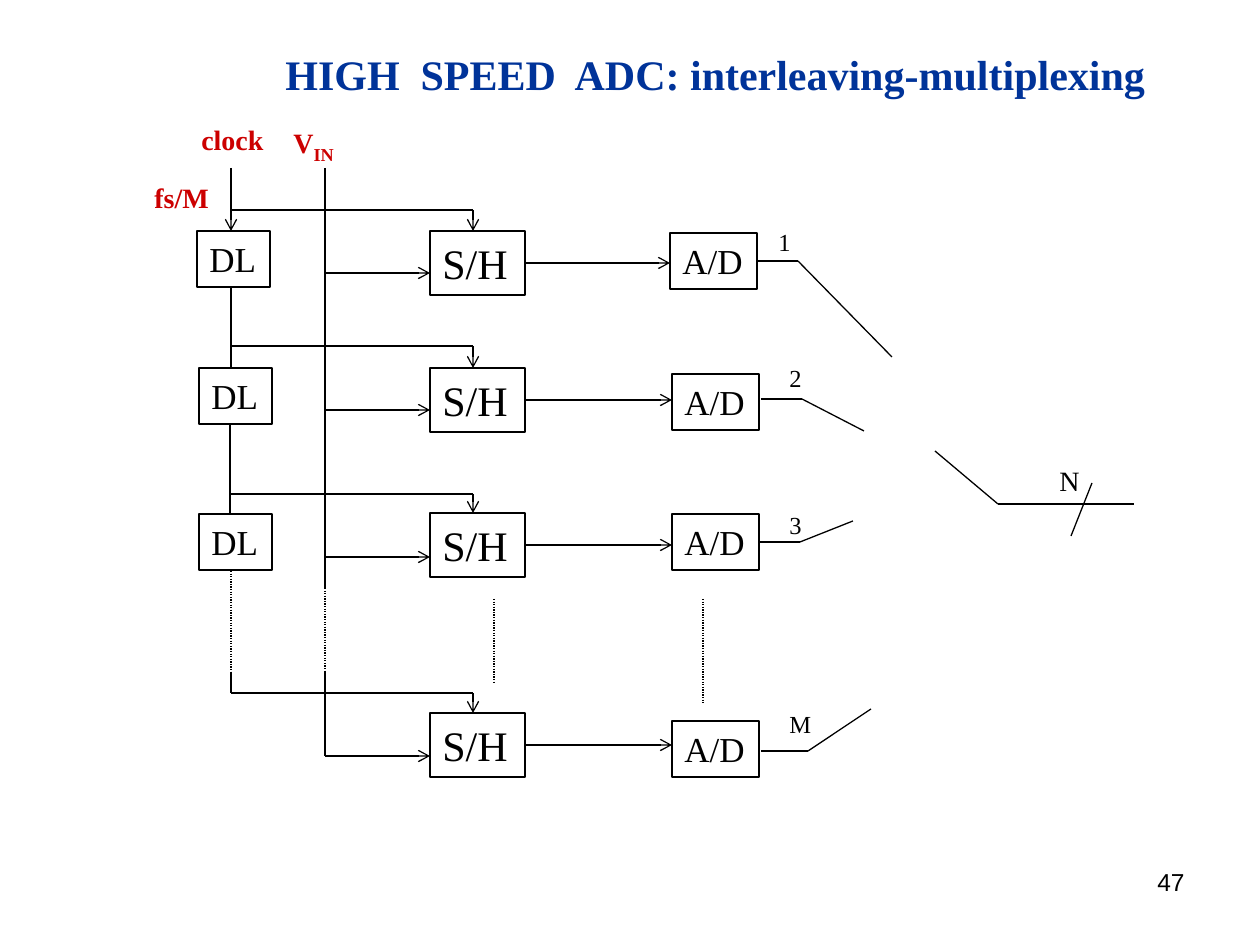
from typing import NamedTuple, Optional

from lxml import etree
from pptx import Presentation
from pptx.dml.color import RGBColor
from pptx.enum.dml import MSO_LINE
from pptx.enum.shapes import MSO_CONNECTOR, MSO_SHAPE
from pptx.enum.text import MSO_ANCHOR, PP_ALIGN
from pptx.oxml.ns import qn
from pptx.util import Emu, Pt

RECT = MSO_SHAPE.RECTANGLE
STRAIGHT = MSO_CONNECTOR.STRAIGHT
DOTTED = MSO_LINE.ROUND_DOT
TOP = MSO_ANCHOR.TOP
LEFT, RIGHT = PP_ALIGN.LEFT, PP_ALIGN.RIGHT
RIGHT_SIDE = 3

EMU_PER_PX = 914400 / 126
BLACK, RED, BLUE = "000000", "CC0000", "003399"
SERIF, SANS = "Times New Roman", "Arial"
CLOCK_X, VIN_X, DROP_X = 231, 325, 473
SH_X, SH_W, SH_H = 430, 95, 64
DL_W, AD_W, BLOCK_H = 73, 87, 56


class Label(NamedTuple):
    text: str
    x: int
    y: int
    w: int
    h: int
    size: int
    color: str = BLACK
    bold: bool = False
    font: str = SERIF
    align: PP_ALIGN = LEFT
    wrap: bool = False
    subscript: str = ""


class Channel(NamedTuple):
    name: str
    name_x: int
    name_y: int
    bus_y: int
    sh_y: int
    vin_y: int
    ad_x: int
    ad_y: int
    lead_x: int
    knee: tuple[int, int]
    tip: tuple[int, int]


class Wire(NamedTuple):
    x1: int
    y1: int
    x2: int
    y2: int
    arrow: bool = False
    dotted: bool = False


CHANNELS = [
    Channel("1", 766, 221, 210, 231, 273, 670, 233, 757, (798, 261), (892, 357)),
    Channel("2", 777, 357, 346, 368, 410, 672, 374, 761, (802, 399), (864, 431)),
    Channel("3", 777, 504, 494, 513, 557, 672, 514, 759, (800, 542), (853, 521)),
    Channel("M", 777, 703, 693, 713, 756, 672, 721, 761, (808, 751), (871, 709)),
]

DELAYS = [(197, 231), (199, 368), (199, 514)]

WIRES = [
    Wire(CLOCK_X, 168, CLOCK_X, 231, arrow=True),
    Wire(CLOCK_X, 287, CLOCK_X, 368),
    Wire(230, 424, 230, 514),
    Wire(CLOCK_X, 571, CLOCK_X, 672, dotted=True),
    Wire(CLOCK_X, 672, CLOCK_X, 693),
    Wire(VIN_X, 168, VIN_X, 588),
    Wire(VIN_X, 588, VIN_X, 672, dotted=True),
    Wire(VIN_X, 672, VIN_X, 756),
    Wire(494, 599, 494, 683, dotted=True),
    Wire(703, 599, 703, 703, dotted=True),
    Wire(935, 451, 998, 504),
    Wire(998, 504, 1134, 504),
    Wire(1092, 483, 1071, 536),
]

LABELS = [
    Label("HIGH  SPEED  ADC: interleaving-multiplexing",
          273, 42, 887, 63, 24, BLUE, True),
    Label("clock", 189, 116, 88, 47, 16, RED, True),
    Label("V", 281, 116, 69, 50, 16, RED, True, wrap=True, subscript="IN"),
    Label("fs/M", 142, 174, 81, 47, 16, RED, True),
    Label("N", 1047, 457, 45, 47, 16),
    Label("47", 903, 861, 294, 66, 14, font=SANS, align=RIGHT, wrap=True),
]


def px(n: int) -> Emu:
    return Emu(round(n * EMU_PER_PX))


def rgb(color: str) -> RGBColor:
    return RGBColor.from_string(color)


def write(s, label: Label) -> None:
    tf = s.text_frame
    tf.word_wrap = label.wrap
    tf.vertical_anchor = TOP
    tf.text = label.text
    p = tf.paragraphs[0]
    p.alignment = label.align
    if label.subscript:
        r = p.add_run()
        r.text = label.subscript
        r._r.get_or_add_rPr().set("baseline", "-25000")
    for r in p.runs:
        r.font.name = label.font
        r.font.size = Pt(label.size)
        r.font.bold = label.bold
        r.font.color.rgb = rgb(label.color)
    if label.subscript:
        p.runs[1].font.size = Pt(18)


def add_label(sp, label: Label) -> None:
    write(sp.add_textbox(px(label.x), px(label.y), px(label.w), px(label.h)), label)


def add_block(sp, label: Label):
    s = sp.add_shape(RECT, px(label.x), px(label.y), px(label.w), px(label.h))
    s.shadow.inherit = False
    s.fill.background()
    s.line.color.rgb = rgb(BLACK)
    s.line.width = Pt(0.75)
    write(s, label)
    return s


def add_wire(sp, wire: Wire, source: Optional[object] = None) -> None:
    c = sp.add_connector(STRAIGHT, px(wire.x1), px(wire.y1), px(wire.x2), px(wire.y2))
    if source is not None:
        c.begin_connect(source, RIGHT_SIDE)
    c.line.color.rgb = rgb(BLACK)
    c.line.width = Pt(0.75)
    if wire.dotted:
        c.line.dash_style = DOTTED
    props = c._element.spPr
    if wire.arrow:
        etree.SubElement(props.find(qn("a:ln")), qn("a:tailEnd"), type="arrow")
    etree.SubElement(props, qn("a:effectLst"))


def add_channel(sp, ch: Channel) -> None:
    sh = add_block(sp, Label("S/H", SH_X, ch.sh_y, SH_W, SH_H, 24, wrap=True))
    ad = add_block(sp, Label("A/D", ch.ad_x, ch.ad_y, AD_W, BLOCK_H, 20))
    out_y = ch.sh_y + SH_H // 2
    knee_x, knee_y = ch.knee
    add_wire(sp, Wire(CLOCK_X, ch.bus_y, DROP_X, ch.bus_y))
    add_wire(sp, Wire(DROP_X, ch.bus_y, DROP_X, ch.sh_y, arrow=True))
    add_wire(sp, Wire(VIN_X, ch.vin_y, SH_X, ch.vin_y, arrow=True))
    add_wire(sp, Wire(SH_X + SH_W, out_y, ch.ad_x, out_y, arrow=True), sh)
    centred = knee_y == ch.ad_y + BLOCK_H // 2
    add_wire(sp, Wire(ch.lead_x, knee_y, knee_x, knee_y), ad if centred else None)
    add_wire(sp, Wire(knee_x, knee_y, *ch.tip))
    add_label(sp, Label(ch.name, ch.name_x, ch.name_y, 38, 42, 14))


def main() -> None:
    prs = Presentation()
    prs.slide_width, prs.slide_height = px(1260), px(945)
    sp = prs.slides.add_slide(prs.slide_layouts[6]).shapes
    for x, y in DELAYS:
        add_block(sp, Label("DL", x, y, DL_W, BLOCK_H, 20))
    for ch in CHANNELS:
        add_channel(sp, ch)
    for wire in WIRES:
        add_wire(sp, wire)
    for label in LABELS:
        add_label(sp, label)
    prs.save("out.pptx")


if __name__ == "__main__":
    main()
